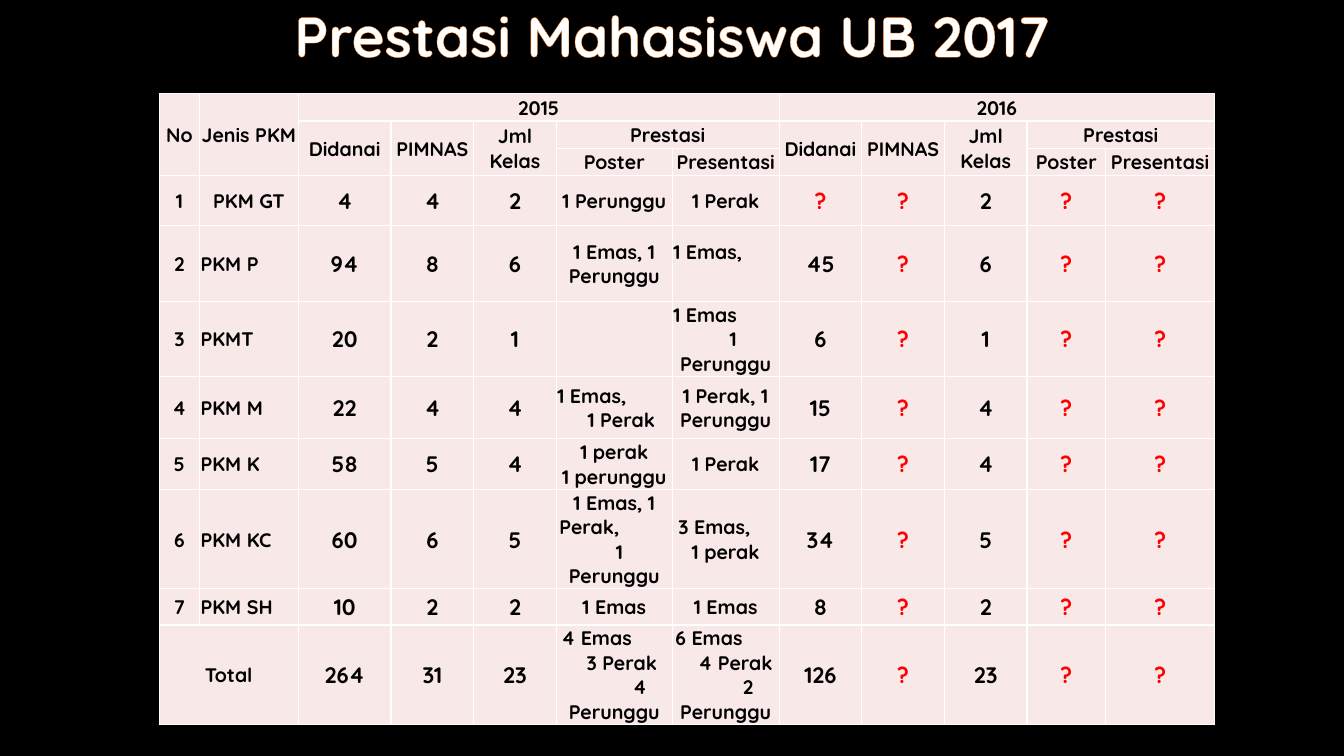
from lxml.etree import SubElement
from pptx import Presentation
from pptx.dml.color import RGBColor
from pptx.enum.text import MSO_ANCHOR, PP_ALIGN
from pptx.oxml.ns import qn
from pptx.util import Inches, Pt

COLORS = {"page": "000000", "cell": "F9E8E8", "text": "000000", "unknown": "FF0000",
          "title": "FFFFFF", "outline": "FE801A", "border": "FFFFFF"}
FONT = "Quicksand"

COLUMN_WEIGHTS = [0.4, 0.98, 0.92, 0.82, 0.82, 1.15, 1.06, 0.82, 0.82, 0.82, 0.78, 1.08]
ROW_WEIGHTS = [0.27, 0.27, 0.27, 0.5, 0.75, 0.75, 0.61, 0.51, 0.98, 0.36, 0.98]
HEADER_ROWS = 3
SMALL_COLUMNS = (0, 1, 5, 6)
KIND_COLUMN = 1

# Header cells: row, column, rows spanned, columns spanned, text
HEADERS = [(0, 0, 3, 1, "No"), (0, 1, 3, 1, "Jenis PKM")]
for first, year in ((2, "2015"), (7, "2016")):
    HEADERS += [(0, first, 1, 5, year),
                (1, first, 2, 1, "Didanai"),
                (1, first + 1, 2, 1, "PIMNAS"),
                (1, first + 2, 2, 1, "Jml Kelas"),
                (1, first + 3, 1, 2, "Prestasi"),
                (2, first + 3, 1, 1, "Poster"),
                (2, first + 4, 1, 1, "Presentasi")]

# Kind, then 2015: funded, PIMNAS, classes, poster, presentation; then 2016: funded.
# A line is either centred text or (text, left indent in inches).
RESULTS = [
    ("PKM GT", "4", "4", "2", ["1 Perunggu"], ["1 Perak"], "?"),
    ("PKM P", "94", "8", "6", ["1 Emas, 1 Perunggu"], [("1 Emas,", 0)], "45"),
    ("PKMT", "20", "2", "1", [], [("1 Emas", 0), ("1", 0.56), "Perunggu"], "6"),
    ("PKM M", "22", "4", "4", [("1 Emas,", 0), ("1 Perak", 0.3)],
     ["1 Perak, 1 Perunggu"], "15"),
    ("PKM K", "58", "5", "4", ["1 perak", "1 perunggu"], ["1 Perak"], "17"),
    ("PKM KC", "60", "6", "5",
     ["1 Emas, 1", ("Perak,", 0.02), ("1", 0.58), "Perunggu"],
     [("3 Emas,", 0.05), "1 perak"], "34"),
    ("PKM SH", "10", "2", "2", ["1 Emas"], ["1 Emas"], "8"),
    ("Total", "264", "31", "23",
     [("4 Emas", 0.04), ("3 Perak", 0.29), ("4", 0.75), "Perunggu"],
     [("6 Emas", 0.02), ("4 Perak", 0.25), ("2", 0.69), "Perunggu"], "126"),
]


def color(name):
    return RGBColor.from_string(COLORS[name])


class Slide:
    def __init__(self, deck):
        self.width, self.height = deck.slide_width, deck.slide_height
        self.page = deck.slides.add_slide(deck.slide_layouts[5])
        self.page.background.fill.solid()
        self.page.background.fill.fore_color.rgb = color("page")

    def place(self, left, top, width, height):
        """Turn percentages of the slide into lengths."""
        return [int(share * side / 100) for share, side in
                zip((left, top, width, height), (self.width, self.height) * 2)]

    def style(self, para, size, name, align=PP_ALIGN.CENTER):
        para.alignment = align
        para.font.name, para.font.size, para.font.bold = FONT, Pt(size), True
        para.font.color.rgb = color(name)

    def line(self, parent, tag, points, name):
        stroke = SubElement(parent, qn(tag), w=str(Pt(points)))
        fill = SubElement(stroke, qn("a:solidFill"))
        SubElement(fill, qn("a:srgbClr"), val=COLORS[name])
        return stroke

    def title(self, text, *shares):
        box = self.page.shapes.title
        box.left, box.top, box.width, box.height = self.place(*shares)
        frame = box.text_frame
        frame.text = text
        frame.vertical_anchor = MSO_ANCHOR.TOP
        para = frame.paragraphs[0]
        para.line_spacing = 0.7
        self.style(para, 40.4, "title")
        self.line(para.runs[0].font._element, "a:ln", 0.52, "outline")

    def table(self, *shares):
        place = self.place(*shares)
        table = self.page.shapes.add_table(
            len(ROW_WEIGHTS), len(COLUMN_WEIGHTS), *place).table
        table.first_row = table.horz_banding = False
        for column, weight in zip(table.columns, COLUMN_WEIGHTS):
            column.width = int(place[2] * weight / sum(COLUMN_WEIGHTS))
        for row, weight in zip(table.rows, ROW_WEIGHTS):
            row.height = int(place[3] * weight / sum(ROW_WEIGHTS))
        for cell in table.iter_cells():
            self.frame_cell(cell)
        return table

    def frame_cell(self, cell):
        cell.margin_left = cell.margin_top = cell.margin_right = Inches(0.01)
        cell.margin_bottom = 0
        cell.vertical_anchor = MSO_ANCHOR.MIDDLE
        properties = cell._tc.get_or_add_tcPr()
        for side in ("a:lnL", "a:lnR", "a:lnT", "a:lnB"):
            self.line(properties, side, 1, "border")
        cell.fill.solid()
        cell.fill.fore_color.rgb = color("cell")

    def write_cell(self, cell, lines, size=14):
        frame = cell.text_frame
        for index, line in enumerate(lines or [""]):
            para = frame.paragraphs[0] if index == 0 else frame.add_paragraph()
            text, indent = line if isinstance(line, tuple) else (line, None)
            para.text = text
            align = PP_ALIGN.CENTER
            if indent is not None:
                align = PP_ALIGN.LEFT
                para._p.get_or_add_pPr().set("marL", str(Inches(indent)))
            self.style(para, size, "unknown" if text == "?" else "text", align)


def main():
    deck = Presentation()
    deck.slide_width, deck.slide_height = Inches(13.33), Inches(7.5)
    slide = Slide(deck)
    slide.title("Prestasi Mahasiswa UB 2017", 14.7, 1.87, 70.67, 14.13)
    table = slide.table(11.85, 12.4, 78.54, 83.33)

    for row, column, rows, columns, text in HEADERS:
        cell = table.cell(row, column)
        if rows * columns > 1:
            cell.merge(table.cell(row + rows - 1, column + columns - 1))
        slide.write_cell(cell, [text])

    for number, (kind, funded, finals, classes, poster, talk, funded_2016) in enumerate(RESULTS, 1):
        row = HEADER_ROWS + number - 1
        centred = kind in ("PKM GT", "Total")
        values = [[str(number)], [kind if centred else (kind, 0)],
                  [funded], [finals], [classes], poster, talk,
                  [funded_2016], ["?"], [classes], ["?"], ["?"]]
        if kind == "Total":
            table.cell(row, 0).merge(table.cell(row, KIND_COLUMN))
            values[0], values[KIND_COLUMN] = [kind], []
        for column, lines in enumerate(values):
            slide.write_cell(table.cell(row, column), lines,
                             14 if column in SMALL_COLUMNS else 16)
        if kind == "PKM P":
            table.cell(row, 6).margin_bottom = Inches(0.24)

    deck.save("out.pptx")


if __name__ == "__main__":
    main()
